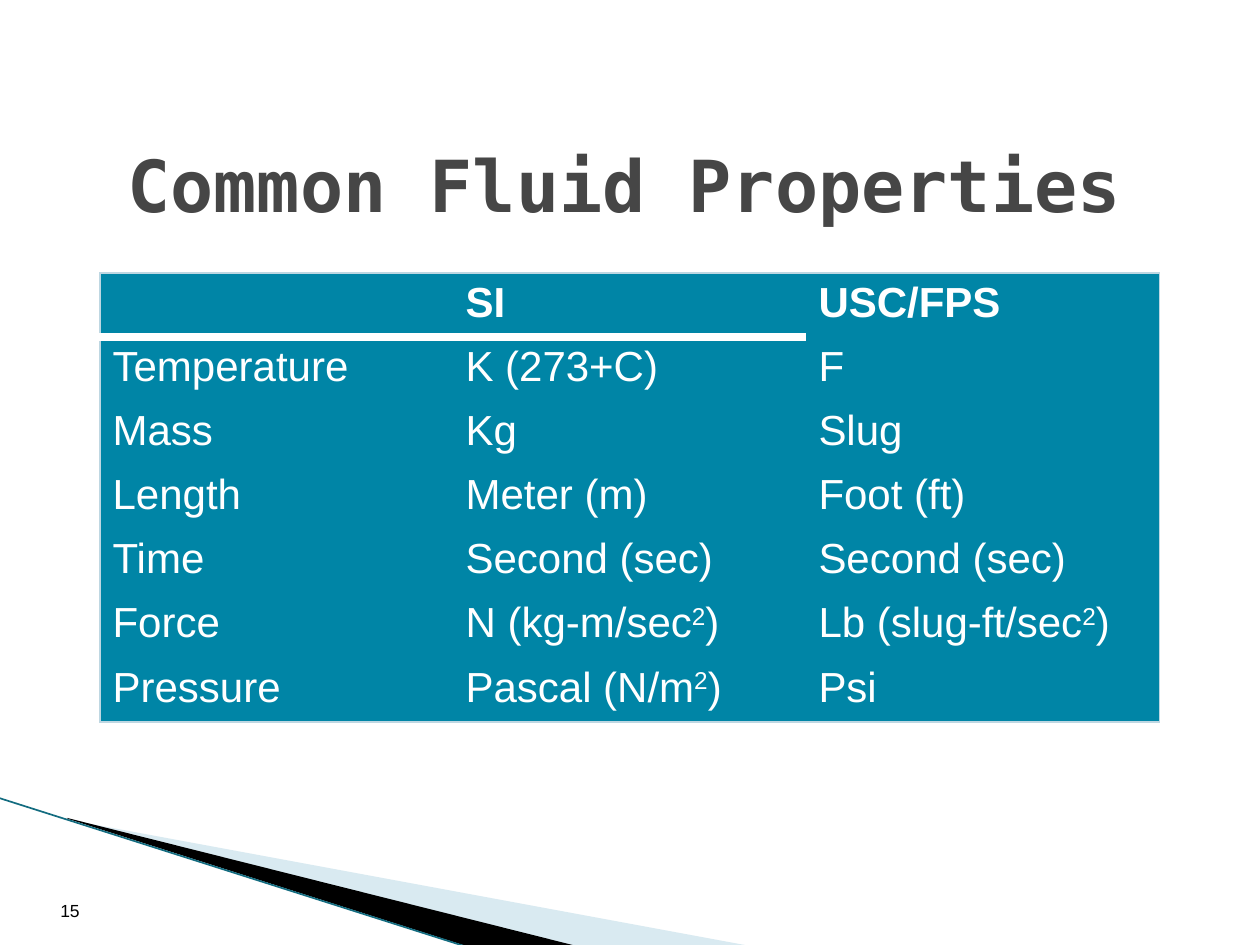
from lxml.etree import SubElement
from pptx import Presentation
from pptx.dml.color import RGBColor
from pptx.enum.shapes import MSO_CONNECTOR
from pptx.enum.text import MSO_ANCHOR, PP_ALIGN
from pptx.oxml.ns import qn
from pptx.util import Emu, Pt

PX = 914400 // 126

TITLE = "Common Fluid Properties"
PAGE = "15"
# A "^" puts the next character in superscript.
ROWS = [
    ("", "SI", "USC/FPS"),
    ("Temperature", "K (273+C)", "F"),
    ("Mass", "Kg", "Slug"),
    ("Length", "Meter (m)", "Foot (ft)"),
    ("Time", "Second (sec)", "Second (sec)"),
    ("Force", "N (kg-m/sec^2)", "Lb (slug-ft/sec^2)"),
    ("Pressure", "Pascal (N/m^2)", "Psi"),
]
COLUMN_WIDTHS = (353, 353, 354)
TABLE_LEFT, TABLE_TOP, TABLE_HEIGHT = 100, 273, 449

# Frame, corner points, fill, opacity in percent
WEDGES = [
    ((98, 689, 524, 199),
     [(69, 820), (750, 946), (575, 946), (69, 819)], "A0CBDC", 40),
    ((-8, 798, 524, 116),
     [(67, 818), (576, 946), (469, 947), (68, 819)], "000000", 100),
]
EDGE_LINE = (-1, 798, 467, 947)

TITLE_FONT = dict(name="DejaVu Sans Mono", size=Pt(41), bold=True)
PAGE_FONT = dict(name="Arial", size=Pt(10), bold=False)
HEADER_FONT = dict(name="Arial", size=Pt(24), bold=True)
BODY_FONT = dict(HEADER_FONT, bold=False)
OUTER_BORDER = ("BED7E2", 0.75)
HEADER_RULE = ("FFFFFF", 5)
NO_TABLE_STYLE = "{2D5ABB26-0587-4C30-8999-92F81FD0307C}"


def px(*lengths):
    return [Emu(length * PX) for length in lengths]


def rgb(color):
    return RGBColor.from_string(color)


def add_run(paragraph, text, font, color):
    run = paragraph.add_run()
    run.text = text
    for key, value in font.items():
        setattr(run.font, key, value)
    run.font.color.rgb = rgb(color)
    return run


def add_label(slide, box, text, font, color, anchor, align):
    frame = slide.shapes.add_textbox(*px(*box)).text_frame
    frame.word_wrap = True
    frame.vertical_anchor = anchor
    frame.paragraphs[0].alignment = align
    add_run(frame.paragraphs[0], text, font, color)


def set_frame(wedge, frame, points):
    """Give the wedge a frame that its outline may run beyond."""
    left, top, width, height = frame
    wedge.left, wedge.top, wedge.width, wedge.height = px(*frame)
    outline = next(wedge._element.iter(qn("a:path")))
    outline.set("w", str(width))
    outline.set("h", str(height))
    for corner, (x, y) in zip(outline.iter(qn("a:pt")), points):
        corner.set("x", str(x - left))
        corner.set("y", str(y - top))


def add_wedge(slide, frame, points, color, opacity):
    start, *others = points
    builder = slide.shapes.build_freeform(*start, scale=PX)
    builder.add_line_segments(others, close=True)
    wedge = builder.convert_to_shape()
    set_frame(wedge, frame, points)
    wedge.shadow.inherit = False
    wedge.line.fill.background()
    wedge.fill.solid()
    wedge.fill.fore_color.rgb = rgb(color)
    if opacity < 100:
        fill_color = wedge.fill._xPr.find(qn("a:solidFill"))[0]
        SubElement(fill_color, qn("a:alpha"), val=str(opacity * 1000))


def add_edge_line(slide):
    edge = slide.shapes.add_connector(MSO_CONNECTOR.STRAIGHT, *px(*EDGE_LINE))
    edge.line.color.rgb = rgb("136C80")
    edge.line.width = Pt(0.95)
    SubElement(edge._element.spPr, qn("a:effectLst"))


def set_borders(cell, borders):
    """Draw the given sides (L, R, T, B) and leave the others without a line."""
    properties = cell._tc.get_or_add_tcPr()
    for side in "LRTB":
        color, width = borders.get(side, (None, 0))
        line = SubElement(properties, qn(f"a:ln{side}"), w=str(Pt(width)))
        if color:
            fill = SubElement(line, qn("a:solidFill"))
            SubElement(fill, qn("a:srgbClr"), val=color)
        else:
            SubElement(line, qn("a:noFill"))


def borders_at(row, column):
    last_row, last_column = len(ROWS) - 1, len(COLUMN_WIDTHS) - 1
    on_edge = {"L": column == 0, "R": column == last_column,
               "T": row == 0, "B": row == last_row}
    borders = {side: OUTER_BORDER for side, drawn in on_edge.items() if drawn}
    if column < last_column:
        if row == 0:
            borders["B"] = HEADER_RULE
        elif row == 1:
            borders["T"] = HEADER_RULE
    return borders


def write_cell(cell, text, font):
    paragraph = cell.text_frame.paragraphs[0]
    before, caret, after = text.partition("^")
    for part, raised in ((before, False), (after[:1], True), (after[1:], False)):
        if part:
            run = add_run(paragraph, part, font, "FFFFFF")
            if raised:
                run.font._element.set("baseline", "30000")


def add_properties_table(slide):
    box = px(TABLE_LEFT, TABLE_TOP, sum(COLUMN_WIDTHS), TABLE_HEIGHT)
    table = slide.shapes.add_table(len(ROWS), len(COLUMN_WIDTHS), *box).table
    table.horz_banding = False
    table._tbl.tblPr.find(qn("a:tableStyleId")).text = NO_TABLE_STYLE
    for column, width in zip(table.columns, px(*COLUMN_WIDTHS)):
        column.width = width
    for r, texts in enumerate(ROWS):
        table.rows[r].height = Emu(TABLE_HEIGHT * PX // len(ROWS))
        for c, text in enumerate(texts):
            cell = table.cell(r, c)
            set_borders(cell, borders_at(r, c))
            cell.fill.solid()
            cell.fill.fore_color.rgb = rgb("0085A6")
            write_cell(cell, text, BODY_FONT if r else HEADER_FONT)


def main():
    deck = Presentation()
    deck.slide_width, deck.slide_height = px(1260, 945)
    slide = deck.slides.add_slide(deck.slide_layouts[6])
    for wedge in WEDGES:
        add_wedge(slide, *wedge)
    add_edge_line(slide)
    add_label(slide, (115, 105, 1092, 157), TITLE, TITLE_FONT, "464646",
              MSO_ANCHOR.MIDDLE, PP_ALIGN.LEFT)
    add_properties_table(slide)
    add_label(slide, (11, 860, 81, 67), PAGE, PAGE_FONT, "000000",
              MSO_ANCHOR.BOTTOM, PP_ALIGN.RIGHT)
    deck.save("out.pptx")


if __name__ == "__main__":
    main()
